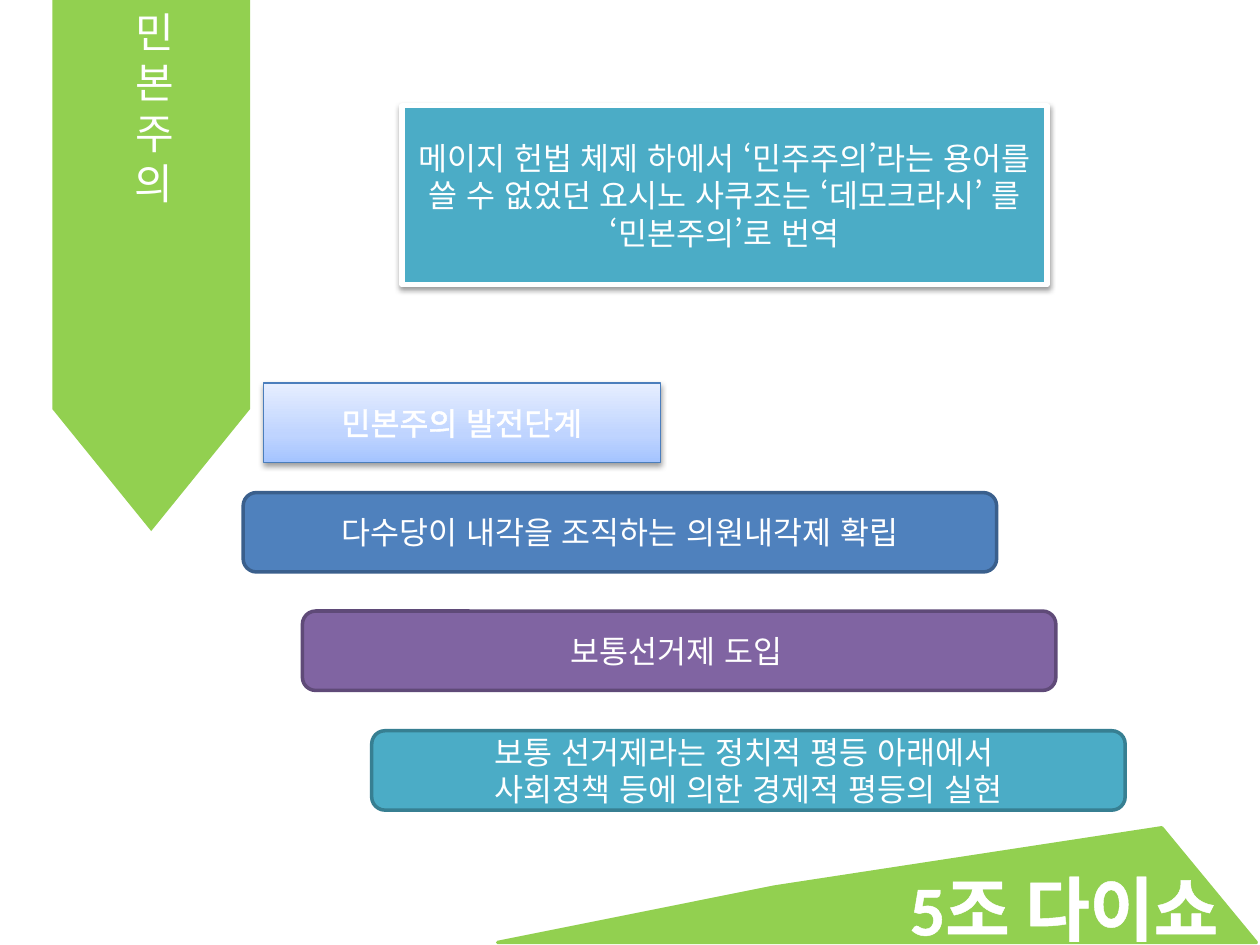
from copy import deepcopy
from dataclasses import dataclass
from typing import Optional

from lxml.etree import SubElement
from pptx import Presentation
from pptx.dml.color import RGBColor
from pptx.enum.lang import MSO_LANGUAGE_ID as Language
from pptx.enum.shapes import MSO_SHAPE as Preset
from pptx.enum.text import MSO_ANCHOR as Anchor, MSO_AUTO_SIZE as AutoSize, PP_ALIGN as Align
from pptx.oxml import parse_xml
from pptx.oxml.ns import nsdecls, qn
from pptx.util import Inches, Pt

WHITE = RGBColor(0xFF, 0xFF, 0xFF)
GREEN = RGBColor(0x92, 0xD0, 0x50)
TEAL = RGBColor(0x4B, 0xAC, 0xC6)
TEAL_EDGE = RGBColor(0x37, 0x7F, 0x92)
BLUE = RGBColor(0x4F, 0x81, 0xBD)
BLUE_EDGE = RGBColor(0x3A, 0x5F, 0x8C)
PURPLE = RGBColor(0x80, 0x64, 0xA2)
PURPLE_EDGE = RGBColor(0x5F, 0x4A, 0x78)
HEADING_EDGE = RGBColor(0x4B, 0x7E, 0xBC)
HEADING_STOPS = (
    (0, RGBColor(0xA4, 0xC4, 0xFF)),
    (0.35, RGBColor(0xBF, 0xD4, 0xFF)),
    (1, RGBColor(0xE6, 0xEE, 0xFF)),
)
BODY_FONT = "Noto Sans CJK KR"


@dataclass(frozen=True)
class Box:
    left: float
    top: float
    width: float
    height: float

    def lengths(self) -> tuple:
        return tuple(map(Inches, (self.left, self.top, self.width, self.height)))


@dataclass(frozen=True)
class Stage:
    text: str
    left: float
    top: float
    fill: RGBColor
    edge: RGBColor
    indent: float = 0


STAGES = (
    Stage("다수당이 내각을 조직하는 의원내각제 확립", 1.93, 3.91, BLUE, BLUE_EDGE),
    Stage("보통선거제 도입", 2.4, 4.85, PURPLE, PURPLE_EDGE, indent=2),
    Stage("보통 선거제라는 정치적 평등 아래에서 \n사회정책 등에 의한 경제적 평등의 실현",
          2.95, 5.8, TEAL, TEAL_EDGE),
)
HILL = ((6.15, 7.04), (9.22, 6.57), (9.97, 7.48), (7.12, 7.48), (3.95, 7.48))


def write_text(shape, text: str, *, size: float = 18, font: str = BODY_FONT,
               bold: bool = False, outline: float = 0, indent: float = 0,
               anchor=Anchor.MIDDLE) -> None:
    frame = shape.text_frame
    frame.auto_size = AutoSize.NONE
    frame.word_wrap = True
    frame.vertical_anchor = anchor
    frame.text = text
    for paragraph in frame.paragraphs:
        paragraph.alignment = Align.LEFT if indent else Align.CENTER
        paragraph.line_spacing = Pt(size * 1.2)
        if indent:
            paragraph._p.get_or_add_pPr().set("marL", str(Inches(indent)))
        run = paragraph.runs[0]
        run.font.language_id = Language.KOREAN
        run.font.size = Pt(size)
        run.font.bold = bold
        run.font.color.rgb = WHITE
        run.font.name = font
        properties = run.font._element
        SubElement(properties, qn("a:ea"), typeface=font)
        if outline:
            properties.insert(0, parse_xml(
                f'<a:ln {nsdecls("a")} w="{Pt(outline)}"><a:solidFill>'
                f'<a:srgbClr val="{WHITE}"/></a:solidFill></a:ln>'))


def style_shape(shape, *, fill: Optional[RGBColor] = None,
                edge: Optional[RGBColor] = None, weight: float = 2) -> None:
    shape.shadow.inherit = False
    if fill is not None:
        shape.fill.solid()
        shape.fill.fore_color.rgb = fill
    if edge is None:
        shape.line.fill.background()
    else:
        shape.line.color.rgb = edge
        shape.line.width = Pt(weight)


def add_box(slide, preset, box: Box, **style):
    shape = slide.shapes.add_shape(preset, *box.lengths())
    style_shape(shape, **style)
    return shape


def drop_shadow(shape) -> None:
    effects = shape.element.spPr.find(qn("a:effectLst"))
    effects.append(parse_xml(
        f'<a:outerShdw {nsdecls("a")} blurRad="{Pt(3.1)}" dist="{Pt(1.6)}" '
        'dir="5400000" rotWithShape="0"><a:srgbClr val="000000">'
        '<a:alpha val="38000"/></a:srgbClr></a:outerShdw>'))


def fill_heading(shape) -> None:
    shape.fill.gradient()
    shape.fill.gradient_angle = 90
    stop_list = shape.element.spPr.find(f'.//{qn("a:gsLst")}')
    stop_list.append(deepcopy(stop_list[0]))
    for stop, (position, color) in zip(shape.fill.gradient_stops, HEADING_STOPS):
        stop.position = position
        stop.color.rgb = color


def add_background(slide) -> None:
    banner = add_box(slide, Preset.PENTAGON, Box(-0.91, 1.32, 4.22, 1.57), fill=GREEN)
    banner.rotation = 90
    banner.adjustments[0] = 0.617

    start, *corners = [(Inches(x), Inches(y)) for x, y in HILL]
    builder = slide.shapes.build_freeform(*start)
    builder.add_line_segments(corners, close=True)
    style_shape(builder.convert_to_shape(), fill=GREEN, edge=GREEN)

    footer = slide.shapes.add_textbox(*Box(6.91, 6.82, 3.07, 0.77).lengths())
    write_text(footer, "5조 다이쇼", size=40, font="Calibri", bold=True,
               outline=1.45, anchor=Anchor.TOP)


def add_title(slide) -> None:
    title = slide.shapes.title
    title.left, title.top, title.width, title.height = Box(0.91, 0, 0.63, 1.72).lengths()
    write_text(title, "민본주의", size=24, font="Lato", anchor=Anchor.TOP)
    slide.shapes.element.append(title.element)


def main() -> None:
    presentation = Presentation()
    presentation.slide_width = Inches(10)
    presentation.slide_height = Inches(7.5)
    slide = presentation.slides.add_slide(presentation.slide_layouts[5])
    add_background(slide)

    definition = add_box(slide, Preset.RECTANGLE, Box(3.19, 0.84, 5.12, 1.42),
                         fill=TEAL, edge=WHITE, weight=3)
    drop_shadow(definition)
    write_text(definition, "메이지 헌법 체제 하에서 ‘민주주의’라는 용어를 쓸 수 없었던 "
                           "요시노 사쿠조는 ‘데모크라시’ 를 ‘민본주의’로 번역")

    heading = add_box(slide, Preset.RECTANGLE, Box(2.09, 3.04, 3.15, 0.63),
                      edge=HEADING_EDGE, weight=0.75)
    fill_heading(heading)
    drop_shadow(heading)
    write_text(heading, "민본주의 발전단계", outline=1.45)

    for stage in STAGES:
        shape = add_box(slide, Preset.ROUNDED_RECTANGLE, Box(stage.left, stage.top, 5.98, 0.63),
                        fill=stage.fill, edge=stage.edge)
        write_text(shape, stage.text, indent=stage.indent)

    add_title(slide)
    presentation.save("out.pptx")


if __name__ == "__main__":
    main()
